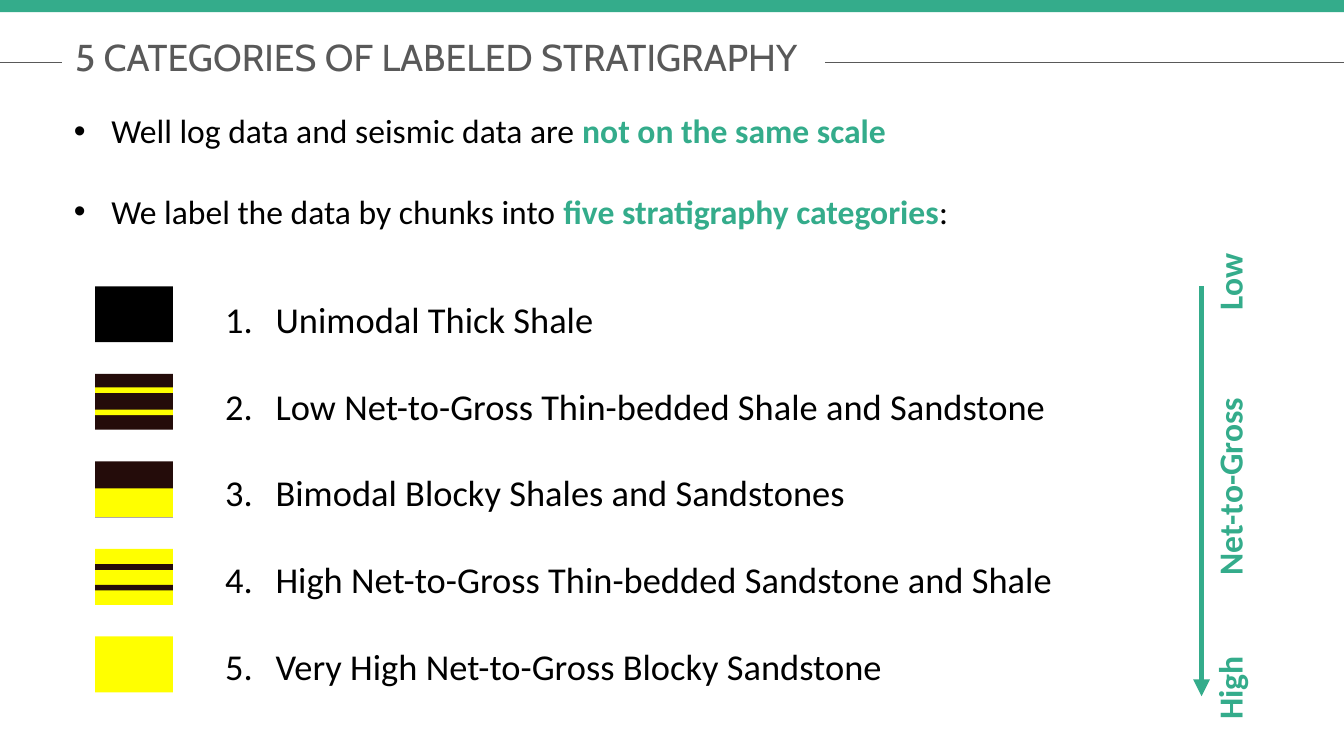
from pptx import Presentation
from pptx.dml.color import RGBColor
from pptx.enum.shapes import MSO_CONNECTOR, MSO_SHAPE
from pptx.enum.text import MSO_ANCHOR, MSO_AUTO_SIZE, PP_ALIGN
from pptx.oxml.ns import qn
from pptx.util import Pt
from lxml.etree import SubElement

GREEN, GREY, BLACK = "34AC8B", "595959", "000000"
SHALE, SAND = "240C0A", "FFFF00"


def paint(part, color):
    """Give a fill, line or font colour from a hex string."""
    if hasattr(part, "solid"):
        part.solid()
        part.fore_color.rgb = RGBColor.from_string(color)
    else:
        part.color.rgb = RGBColor.from_string(color)


def put(item, **values):
    """Set each named value on the item."""
    for name, value in values.items():
        setattr(item, name, value)


deck = Presentation()
put(deck, slide_width=Pt(720), slide_height=Pt(405))
slide = deck.slides.add_slide(deck.slide_layouts[1])
shapes = slide.shapes
title, body = shapes.title, slide.placeholders[1]

# Title
put(title, left=Pt(33), top=Pt(19.5), width=Pt(409), height=Pt(22))
put(title.text_frame, text="5 CATEGORIES OF LABELED STRATIGRAPHY", word_wrap=True,
    auto_size=MSO_AUTO_SIZE.NONE, vertical_anchor=MSO_ANCHOR.MIDDLE)
head = title.text_frame.paragraphs[0]
head.alignment = PP_ALIGN.LEFT
put(head.font, name="Cabin", size=Pt(20))
paint(head.font, GREY)

# Bullets and numbered list: mark, size, space before, runs (every second run is a key phrase)
rows = [
    ("•", 18, 0, ["Well log data and seismic data are ", "not on the same scale"]),
    ("•", 18, 21.4, ["We label the data by chunks into ", "five stratigraphy categories", ":"]),
    ("1", 19.5, 35.5, ["Unimodal Thick Shale"]),
    ("1", 19.5, 23, ["Low Net-to-Gross Thin-bedded Shale and Sandstone"]),
    ("1", 19.5, 23, ["Bimodal Blocky Shales and Sandstones"]),
    ("1", 19.5, 23, ["High Net-to-Gross Thin-bedded Sandstone and Shale"]),
    ("1", 19.5, 23, ["Very High Net-to-Gross Blocky Sandstone"]),
]
put(body, left=Pt(32.4), top=Pt(55.5), width=Pt(600), height=Pt(322))
frame = body.text_frame
put(frame, word_wrap=True, auto_size=MSO_AUTO_SIZE.NONE)
for i, (mark, size, gap, runs) in enumerate(rows):
    para = frame.add_paragraph() if i else frame.paragraphs[0]
    put(para, space_before=Pt(gap), level=0 if mark == "•" else 3)
    props = para._p.get_or_add_pPr()
    left, hang = (20, 20) if mark == "•" else (108, 27)
    props.set("marL", str(Pt(left)))
    props.set("indent", str(-Pt(hang)))
    if mark == "•":
        SubElement(props, qn("a:buFont"), typeface="Arial")
        SubElement(props, qn("a:buChar"), char=mark)
    else:
        SubElement(props, qn("a:buFont"), typeface="+mj-lt")
        SubElement(props, qn("a:buAutoNum"), type="arabicPeriod")
    for j, text in enumerate(runs):
        run = para.add_run()
        run.text = text
        key = j % 2 == 1
        put(run.font, name="Calibri", size=Pt(size), bold=key)
        paint(run.font, GREEN if key else BLACK)

# Top bar and swatches: base colour, band colour, bands as (offset, height)
blocks = [(0, 0, 720, 6.5, GREEN)]
beds = [
    (BLACK, SAND, []),
    (SHALE, SAND, [(7.2, 3), (19.2, 3)]),
    (SHALE, SAND, [(14.4, 15.4)]),
    (SAND, SHALE, [(8.2, 3), (19.2, 3)]),
    (SAND, SHALE, []),
]
for i, (base, band, bands) in enumerate(beds):
    top = 153.4 + 46.9 * i
    blocks.append((51, top, 41.6, 30, base))
    for shift, high in bands:
        blocks.append((51, top + shift, 41.6, high, band))
for x, y, wide, high, color in blocks:
    block = shapes.add_shape(MSO_SHAPE.RECTANGLE, Pt(x), Pt(y), Pt(wide), Pt(high))
    block.shadow.inherit = False
    paint(block.fill, color)
    block.line.fill.background()

# Rules beside the title and the net-to-gross arrow
lines = [
    (0, 33.6, 33, 33.6, GREY, 0.75, False),
    (442, 33.6, 720, 33.6, GREY, 0.75, False),
    (643.7, 153.4, 643.7, 373, GREEN, 3, True),
]
for x1, y1, x2, y2, color, width, arrow in lines:
    line = shapes.add_connector(MSO_CONNECTOR.STRAIGHT, Pt(x1), Pt(y1), Pt(x2), Pt(y2))
    paint(line.line, color)
    line.line.width = Pt(width)
    if arrow:
        SubElement(line.line._get_or_add_ln(), qn("a:tailEnd"), type="triangle")
    SubElement(line._element.spPr, qn("a:effectLst"))

# Upright labels, centred on one axis
for text, mid, wide in [("Low", 151.2, 57), ("Net-to-Gross", 260.6, 133), ("High", 368.7, 61)]:
    label = shapes.add_textbox(Pt(658.6 - wide / 2), Pt(mid - 14.5), Pt(wide), Pt(29))
    label.rotation = 270
    put(label.text_frame, text=text, word_wrap=True)
    para = label.text_frame.paragraphs[0]
    para.alignment = PP_ALIGN.CENTER
    put(para.font, name="Calibri", size=Pt(18), bold=True)
    paint(para.font, GREEN)

deck.save("out.pptx")
